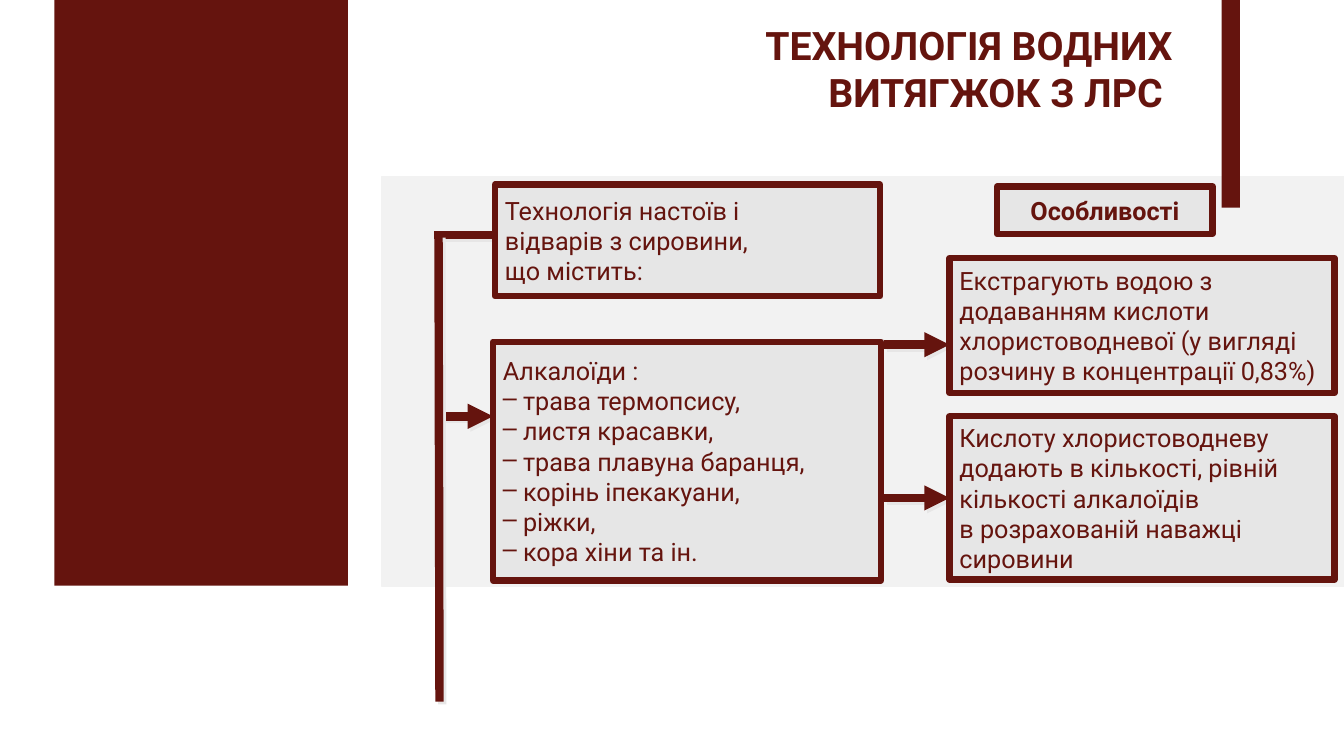
from dataclasses import dataclass

import pptx
import pptx.dml.color
import pptx.enum.shapes
import pptx.enum.text
import pptx.oxml
import pptx.oxml.ns
import pptx.util

WINE, GREY, PALE, SHADE = "65140E", "E6E6E6", "F2F2F2", "E7E6E6"
WIDE, HIGH = pptx.util.Inches(13.333), pptx.util.Inches(7.5)
FONT = "Roboto"
ALIGN = pptx.enum.text.PP_ALIGN


# All places and sizes are percent of the slide's width and height
@dataclass
class Block:
    area: tuple[float, float, float, float]
    fill: str
    edge: str = ""
    thick: float = 0


@dataclass
class Note:
    area: tuple[float, float, float, float]
    lead: str
    items: tuple[str, ...] = ()
    align: ALIGN = ALIGN.LEFT
    bold: bool = False


@dataclass
class Link:
    start: tuple[float, float]
    end: tuple[float, float]
    arrow: bool = False
    goal: str = ""


BLOCKS = [
    Block((28.43, 23.33, 71.57, 54.27), PALE, PALE, 1),
    Block((90.9, 0, 1.35, 27.47), WINE),
    Block((4.05, 0, 21.83, 77.47), WINE),
]
TITLE = Note((51.23, 0, 36.75, 18), "ТЕХНОЛОГІЯ ВОДНИХ ВИТЯГЖОК З ЛРС ",
             align=ALIGN.RIGHT, bold=True)
NOTES = {
    "topic": Note((36.83, 24.4, 28.65, 14.8),
                  "Технологія настоїв і\nвідварів з сировини,\nщо містить:"),
    "traits": Note((74.18, 24.67, 16.05, 6.27), "Особливості",
                   align=ALIGN.CENTER, bold=True),
    "herbs": Note((36.68, 45.2, 28.88, 31.6), "Алкалоїди :",
                  (" трава термопсису,", " листя красавки,",
                   " трава плавуна баранця,", " корінь іпекакуани,",
                   " ріжки,", " кора хіни та ін.")),
    "water": Note((70.65, 34.13, 28.65, 17.87),
                  "Екстрагують водою з\nдодаванням кислоти\n"
                  "хлористоводневої (у вигляді розчину в концентрації 0,83%)"),
    "acid": Note((70.65, 55.07, 28.65, 21.6),
                 "Кислоту хлористоводневу\nдодають в кількості, рівній "
                 "кількості алкалоїдів\nв розрахованій наважці сировини"),
}
LINKS = [
    Link((65.78, 65.87), (70.65, 65.87), True, "acid"),
    Link((65.78, 45.6), (70.65, 45.6), True),
    Link((32.33, 31.07), (36.68, 31.07)),
    Link((32.7, 55.07), (36.68, 55.07), True),
    Link((32.63, 31.07), (32.7, 92.8)),
]


def tint(code: str) -> pptx.dml.color.RGBColor:
    return pptx.dml.color.RGBColor.from_string(code)


def place(x: float, y: float) -> tuple[int, int]:
    return round(WIDE * x / 100), round(HIGH * y / 100)


def draw_block(slide, block: Block):
    x, y, w, h = block.area
    shape = slide.shapes.add_shape(pptx.enum.shapes.MSO_SHAPE.RECTANGLE,
                                   *place(x, y), *place(w, h))
    shape.shadow.inherit = False
    shape.fill.solid()
    shape.fill.fore_color.rgb = tint(block.fill)
    if block.edge:
        shape.line.color.rgb = tint(block.edge)
        shape.line.width = pptx.util.Pt(block.thick)
    else:
        shape.line.fill.background()
    return shape


def write(shape, note: Note, size: float) -> None:
    frame = shape.text_frame
    frame.word_wrap = True
    frame.vertical_anchor = pptx.enum.text.MSO_ANCHOR.MIDDLE
    for i, text in enumerate((note.lead, *note.items)):
        para = frame.add_paragraph() if i else frame.paragraphs[0]
        para.text = text
        para.alignment = note.align
        if i:
            mark = pptx.oxml.parse_xml(
                f'<a:buChar {pptx.oxml.ns.nsdecls("a")} char="–"/>')
            para._p.get_or_add_pPr().append(mark)
        for run in para.runs:
            run.font.name = FONT
            run.font.size = pptx.util.Pt(size)
            run.font.bold = note.bold
            run.font.color.rgb = tint(WINE)


def draw_link(slide, link: Link):
    line = slide.shapes.add_connector(
        pptx.enum.shapes.MSO_CONNECTOR.STRAIGHT,
        *place(*link.start), *place(*link.end))
    line.line.color.rgb = tint(WINE)
    line.line.width = pptx.util.Pt(6)
    space = pptx.oxml.ns.nsdecls("a")
    if link.arrow:
        line.line._get_or_add_ln().append(
            pptx.oxml.parse_xml(f'<a:tailEnd {space} type="triangle"/>'))
    line._element.spPr.append(pptx.oxml.parse_xml(
        f'<a:effectLst {space}><a:outerShdw dist="35560" dir="2700000">'
        f'<a:srgbClr val="{SHADE}"/></a:outerShdw></a:effectLst>'))
    return line


def main() -> None:
    deck = pptx.Presentation()
    deck.slide_width, deck.slide_height = WIDE, HIGH
    slide = deck.slides.add_slide(deck.slide_layouts[6])

    # Backdrop
    for block in BLOCKS:
        draw_block(slide, block)

    # Title
    x, y, w, h = TITLE.area
    write(slide.shapes.add_textbox(*place(x, y), *place(w, h)), TITLE, 28)

    # Lines lie beneath the boxes
    lines = [draw_link(slide, link) for link in LINKS]

    # Framed boxes
    boxes = {}
    for name, note in NOTES.items():
        boxes[name] = draw_block(slide, Block(note.area, GREY, WINE, 4.5))
        write(boxes[name], note, 18)

    # Joints
    for line, link in zip(lines, LINKS):
        if link.goal:
            line.end_connect(boxes[link.goal], 1)

    deck.save("out.pptx")


if __name__ == "__main__":
    main()
